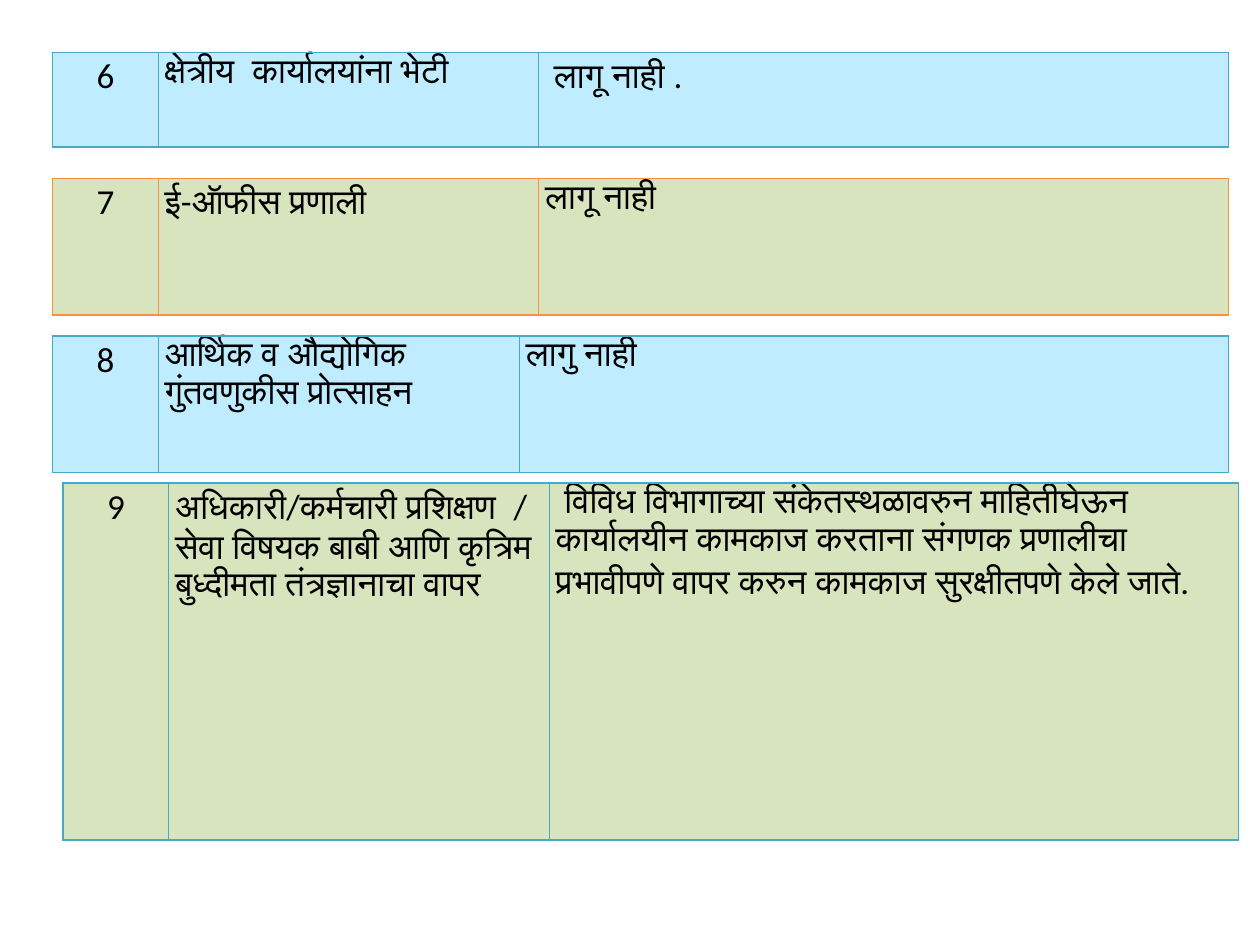
from dataclasses import dataclass

from lxml.etree import SubElement as Sub
from pptx import Presentation
from pptx.dml.color import RGBColor
from pptx.enum.text import PP_ALIGN as Align
from pptx.oxml.ns import qn
from pptx.slide import Slide
from pptx.util import Pt

SKY = RGBColor(0xBF, 0xEC, 0xFF)
GREEN = RGBColor(0xD7, 0xE4, 0xBD)
TEAL = RGBColor(0x46, 0xAA, 0xC5)
ORANGE = RGBColor(0xF6, 0x92, 0x40)
BLACK = RGBColor(0, 0, 0)
WIDTH, NUM = 672, 60.5

ROWS = [
    (30, 30, 54, 217.5, SKY, TEAL,
     ("6", "क्षेत्रीय  कार्यालयांना भेटी", " लागू नाही .")),
    (30, 102, 78, 217.5, GREEN, ORANGE,
     ("7", "ई-ऑफीस प्रणाली", "लागू नाही")),
    (30, 192, 78, 206.5, SKY, TEAL,
     ("8", "आर्थिक व औद्योगिक  गुंतवणुकीस प्रोत्साहन", "लागु नाही")),
    (36, 276, 204, 217.5, GREEN, TEAL,
     ("9", "अधिकारी/कर्मचारी प्रशिक्षण  / सेवा विषयक बाबी आणि कृत्रिम "
           "बुध्दीमता तंत्रज्ञानाचा वापर",
      " विविध विभागाच्या संकेतस्थळावरुन माहितीघेऊन कार्यालयीन कामकाज करताना "
      "संगणक प्रणालीचा प्रभावीपणे वापर करुन कामकाज सुरक्षीतपणे केले जाते.")),
]


def write(frame, text, font="Calibri", size=20, color=BLACK, align=Align.LEFT):
    par = frame.paragraphs[0]
    par.alignment = align
    par.line_spacing = 1.07
    run = par.add_run()
    run.text = text
    run.font.name = font
    run.font.size = Pt(size)
    run.font.color.rgb = color


@dataclass
class Page:
    """Holds the current slide and the style of its tables."""
    slide: Slide
    inset: float = 3.6
    line: float = 0.75

    def edge(self, cell, color):
        props = cell._tc.get_or_add_tcPr()
        for spot, side in enumerate(("lnL", "lnR", "lnT", "lnB")):
            line = Sub(props, qn(f"a:{side}"), w=str(Pt(self.line)))
            fill = Sub(line, qn("a:solidFill"))
            Sub(fill, qn("a:srgbClr"), val=str(color))
            props.insert(spot, line)

    def table(self, left, top, high, topic, fill, rim, texts):
        frame = self.slide.shapes.add_table(
            1, len(texts), Pt(left), Pt(top), Pt(WIDTH), Pt(high))
        table = frame.table
        table.first_row = table.horz_banding = False
        sizes = NUM, topic, WIDTH - NUM - topic
        for col, (wide, text) in enumerate(zip(sizes, texts)):
            table.columns[col].width = Pt(wide)
            cell = table.cell(0, col)
            cell.margin_left = cell.margin_right = Pt(self.inset)
            cell.margin_top = cell.margin_bottom = Pt(0)
            cell.fill.solid()
            cell.fill.fore_color.rgb = fill
            self.edge(cell, rim)
            write(cell.text_frame, text,
                  align=Align.LEFT if col else Align.CENTER)


def main():
    deck = Presentation()
    deck.slide_width, deck.slide_height = Pt(720), Pt(540)
    page = Page(deck.slides.add_slide(deck.slide_layouts[6]))
    for row in ROWS:
        page.table(*row)
    deck.save("out.pptx")


if __name__ == "__main__":
    main()
